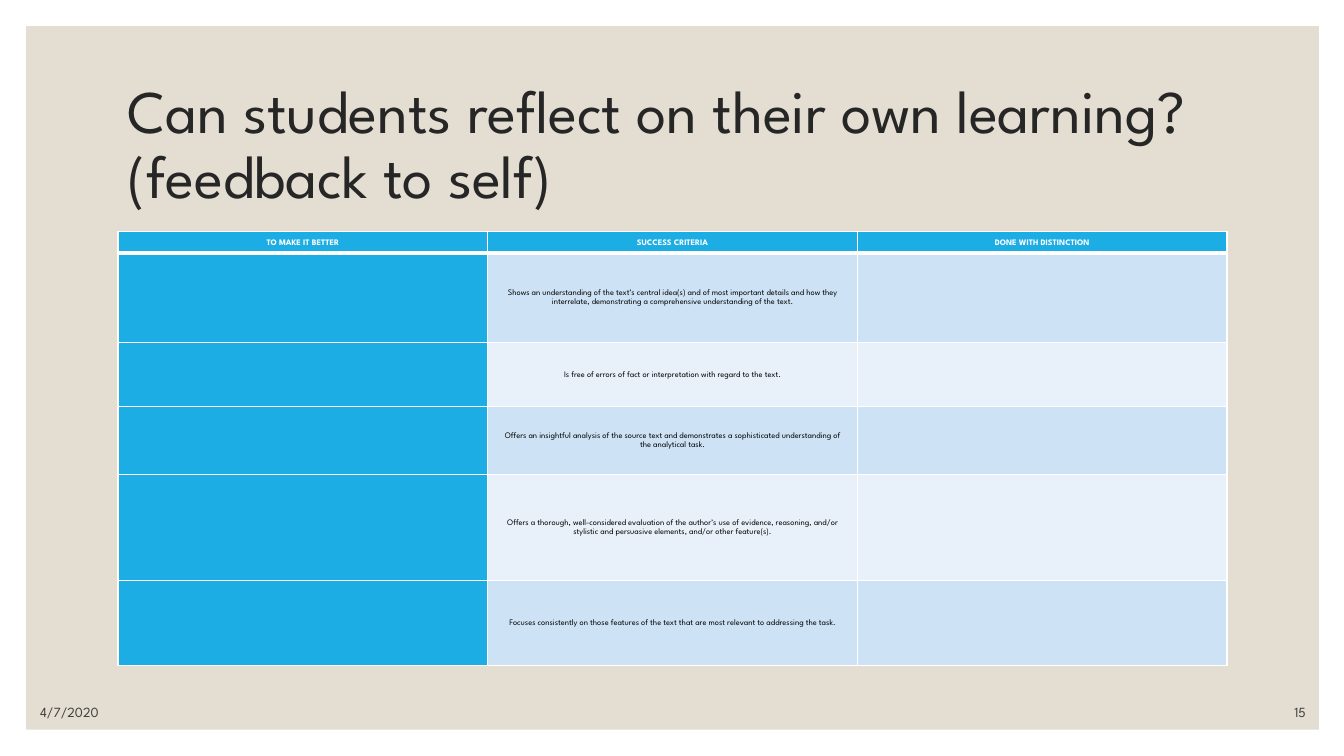
import pptx
import pptx.util
import pptx.dml.color
import pptx.enum.shapes
import pptx.enum.text
import pptx.oxml
import pptx.oxml.ns

Inches = pptx.util.Inches
RGBColor = pptx.dml.color.RGBColor
ALIGN = pptx.enum.text.PP_ALIGN
ANCHOR = pptx.enum.text.MSO_ANCHOR

TITLE = "Can students reflect on their own learning? (feedback to self)"
DATE = "4/7/2020"
SLIDE_NUMBER = "15"
HEADINGS = ["TO MAKE IT BETTER", "SUCCESS CRITERIA", "DONE WITH DISTINCTION"]
CRITERIA = [
    "Shows an understanding of the text’s central idea(s) and of most important details and how they "
    "interrelate, demonstrating a comprehensive understanding of the text.",
    "Is free of errors of fact or interpretation with regard to the text.",
    "Offers an insightful analysis of the source text and demonstrates a sophisticated understanding of "
    "the analytical task.",
    "Offers a thorough, well-considered evaluation of the author’s use of evidence, reasoning, and/or "
    "stylistic and persuasive elements, and/or other feature(s).",
    "Focuses consistently on those features of the text that are most relevant to addressing the task.",
]
ROW_HEIGHTS = [0.21, 0.89, 0.63, 0.68, 1.05, 0.84]
TABLE_BOX = (1.17, 2.3, 11, 4.3)

FONT = "League Spartan"
WHITE = RGBColor(0xFF, 0xFF, 0xFF)
BLACK = RGBColor(0x00, 0x00, 0x00)
SAND = RGBColor(0xE3, 0xDE, 0xD1)
BLUE = RGBColor(0x1C, 0xAD, 0xE4)
BANDS = [RGBColor(0xCD, 0xE3, 0xF5), RGBColor(0xE8, 0xF1, 0xFA)]
TITLE_GREY = RGBColor(0x26, 0x26, 0x26)
FOOTER_GREY = RGBColor(0x40, 0x40, 0x40)


def write(frame, text, *, size, color, bold=False, align=ALIGN.LEFT, spacing=1.0):
    paragraph = frame.paragraphs[0]
    paragraph.alignment = align
    paragraph.line_spacing = spacing
    run = paragraph.add_run()
    run.text = text
    run.font.name = FONT
    run.font.size = pptx.util.Pt(size)
    run.font.bold = bold
    run.font.color.rgb = color


def add_text(slide, box, text, *, anchor, **text_format):
    frame = slide.shapes.add_textbox(*map(Inches, box)).text_frame
    frame.word_wrap = True
    frame.vertical_anchor = anchor
    write(frame, text, **text_format)


def set_borders(cell, top, bottom):
    """Draw white borders, with top and bottom widths in points."""
    properties = cell._tc.get_or_add_tcPr()
    widths = {"lnL": 1, "lnR": 1, "lnT": top, "lnB": bottom}
    for position, (tag, width) in enumerate(widths.items()):
        line = pptx.oxml.parse_xml(
            f'<a:{tag} {pptx.oxml.ns.nsdecls("a")} w="{pptx.util.Pt(width)}">'
            f'<a:solidFill><a:srgbClr val="{WHITE}"/></a:solidFill></a:{tag}>'
        )
        properties.insert(position, line)


def add_criteria_table(slide):
    rows = [HEADINGS] + [["", criterion, ""] for criterion in CRITERIA]
    table = slide.shapes.add_table(len(rows), len(HEADINGS), *map(Inches, TABLE_BOX)).table
    for column in table.columns:
        column.width = Inches(TABLE_BOX[2] / len(HEADINGS))
    for row_index, texts in enumerate(rows):
        table.rows[row_index].height = Inches(ROW_HEIGHTS[row_index])
        header = row_index == 0
        for column_index, text in enumerate(texts):
            cell = table.cell(row_index, column_index)
            cell.fill.solid()
            blue = header or column_index == 0
            cell.fill.fore_color.rgb = BLUE if blue else BANDS[(row_index - 1) % 2]
            set_borders(cell, top=3 if row_index == 1 else 1, bottom=3 if header else 1)
            if text:
                cell.vertical_anchor = ANCHOR.MIDDLE
                cell.margin_left = cell.margin_right = Inches(0.12)
                cell.margin_top = cell.margin_bottom = 0
                write(cell.text_frame, text, size=6, color=WHITE if header else BLACK,
                      bold=header, align=ALIGN.CENTER, spacing=1.15)


def main():
    presentation = pptx.Presentation()
    presentation.slide_width = Inches(13.33)
    presentation.slide_height = Inches(7.5)
    slide = presentation.slides.add_slide(presentation.slide_layouts[6])

    panel = slide.shapes.add_shape(pptx.enum.shapes.MSO_SHAPE.RECTANGLE,
                                   *map(Inches, (0.26, 0.26, 12.82, 6.98)))
    panel.shadow.inherit = False
    panel.fill.solid()
    panel.fill.fore_color.rgb = SAND
    panel.line.fill.background()

    add_text(slide, (1.17, 0.7, 11, 1.5), TITLE, anchor=ANCHOR.MIDDLE,
             size=43.2, color=TITLE_GREY, spacing=0.9)
    add_criteria_table(slide)
    add_text(slide, (0.3, 6.9, 3, 0.3), DATE, anchor=ANCHOR.BOTTOM, size=10, color=FOOTER_GREY)
    add_text(slide, (11.45, 6.9, 1.6, 0.3), SLIDE_NUMBER, anchor=ANCHOR.BOTTOM,
             size=10, color=FOOTER_GREY, align=ALIGN.RIGHT)
    presentation.save("out.pptx")


if __name__ == "__main__":
    main()
